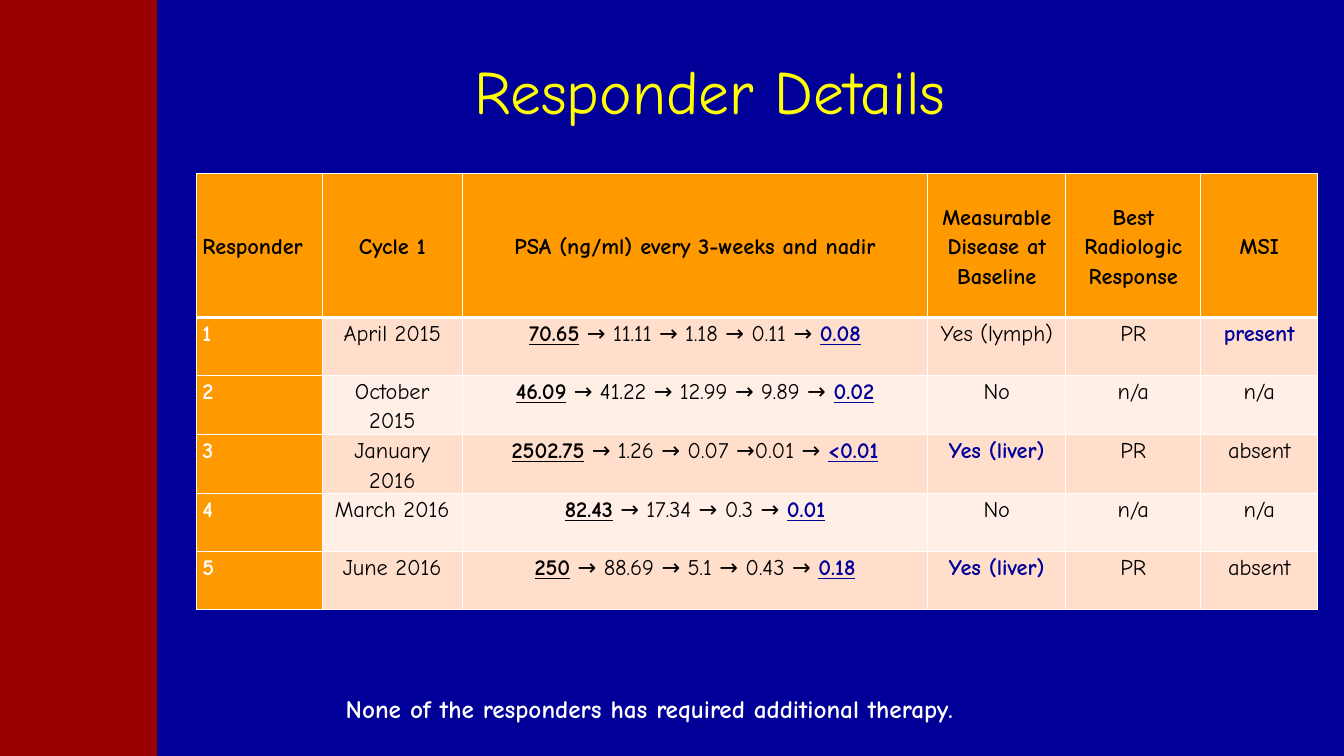
from lxml import etree
from pptx import Presentation
from pptx import util as u
from pptx.dml.color import RGBColor
from pptx.enum import shapes, text
from pptx.oxml import ns

BLUE = RGBColor(0x00, 0x00, 0x99)
RED = RGBColor(0x99, 0x00, 0x00)
YELLOW = RGBColor(0xFF, 0xFF, 0x00)
ORANGE = RGBColor(0xFF, 0x99, 0x00)
PEACH = RGBColor(0xFF, 0xDE, 0xCB)
CREAM = RGBColor(0xFF, 0xEF, 0xE7)
WHITE = RGBColor(0xFF, 0xFF, 0xFF)
BLACK = RGBColor(0x00, 0x00, 0x00)

LEFT, CENTER = text.PP_ALIGN.LEFT, text.PP_ALIGN.CENTER
TOP, MIDDLE = text.MSO_ANCHOR.TOP, text.MSO_ANCHOR.MIDDLE
ARROW = " → "
HEADERS = ["Responder", "Cycle 1", "PSA (ng/ml) every 3-weeks and nadir",
           "Measurable Disease at Baseline", "Best Radiologic Response", "MSI"]
RESPONDERS = [
    ["1", "April 2015", "70.65 → 11.11 → 1.18 → 0.11 → 0.08", "Yes (lymph)", "PR", "present"],
    ["2", "October 2015", "46.09 → 41.22 → 12.99 → 9.89 → 0.02", "No", "n/a", "n/a"],
    ["3", "January 2016", "2502.75 → 1.26 → 0.07 →0.01 → <0.01", "Yes (liver)", "PR", "absent"],
    ["4", "March 2016", "82.43 → 17.34 → 0.3 → 0.01", "No", "n/a", "n/a"],
    ["5", "June 2016", "250 → 88.69 → 5.1 → 0.43 → 0.18", "Yes (liver)", "PR", "absent"],
]
HIGHLIGHTS = {"Yes (liver)", "present"}
COLUMN_WIDTHS = [3.17, 3.53, 11.73, 3.48, 3.4, 2.95]
HEADER_HEIGHT, ROW_HEIGHT = 3.63, 1.46


class SlideBuilder:
    """Holds the text style and the current slide."""

    def __init__(self, slide, font_name):
        """Set the slide to draw on and its typeface."""
        self.slide = slide
        self.font_name = font_name

    def background(self, color):
        """Fill the slide background."""
        fill = self.slide.background.fill
        fill.solid()
        fill.fore_color.rgb = color

    def place(self, shape, *box):
        """Set left, top, width and height in centimetres."""
        for name, value in zip(("left", "top", "width", "height"), box):
            setattr(shape, name, u.Cm(value))

    def run(self, paragraph, words, size, color, **style):
        """Add one formatted run."""
        run = paragraph.add_run()
        run.text = words
        run.font.color.rgb = color
        for name, value in {"name": self.font_name, "size": u.Pt(size), **style}.items():
            setattr(run.font, name, value)

    def title(self, words, *box):
        """Move and format the title placeholder."""
        shape = self.slide.shapes.title
        self.place(shape, *box)
        frame = shape.text_frame
        frame.auto_size = text.MSO_AUTO_SIZE.NONE
        frame.vertical_anchor = MIDDLE
        frame.paragraphs[0].alignment = CENTER
        self.run(frame.paragraphs[0], words, 44, YELLOW)

    def band(self, color, *box):
        """Add a plain rectangle."""
        shape = self.slide.shapes.add_shape(shapes.MSO_SHAPE.RECTANGLE, *map(u.Cm, box))
        shape.shadow.inherit = False
        shape.fill.solid()
        shape.fill.fore_color.rgb = color
        shape.line.fill.background()

    def note(self, words, *box):
        """Add a bold line of text."""
        frame = self.slide.shapes.add_textbox(*map(u.Cm, box)).text_frame
        frame.word_wrap = True
        frame.auto_size = text.MSO_AUTO_SIZE.SHAPE_TO_FIT_TEXT
        self.run(frame.paragraphs[0], words, 18, WHITE, bold=True)

    def borders(self, cell, widths):
        """Draw white borders; widths are points for each side."""
        properties = cell._tc.get_or_add_tcPr()
        for side, width in widths.items():
            line = etree.SubElement(properties, ns.qn(f"a:ln{side}"), w=str(u.Pt(width)))
            fill = etree.SubElement(line, ns.qn("a:solidFill"))
            etree.SubElement(fill, ns.qn("a:srgbClr"), val=str(WHITE))

    def cell_text(self, paragraph, words, row, column):
        """Write a cell, stressing baseline, nadir and notable findings."""
        if row and ARROW in words:
            baseline, _, rest = words.partition(ARROW)
            middle, _, nadir = rest.rpartition(ARROW)
            self.run(paragraph, baseline, 16, BLACK, bold=True, underline=True)
            self.run(paragraph, ARROW + middle + ARROW, 16, BLACK, bold=False)
            self.run(paragraph, nadir, 16, BLUE, bold=True, underline=True)
            return
        highlighted = words in HIGHLIGHTS
        color = BLUE if highlighted else WHITE if row and not column else BLACK
        self.run(paragraph, words, 16, color, bold=highlighted or not row or not column)

    def table(self, rows, left, top):
        """Add the table with an orange header row and first column."""
        heights = [HEADER_HEIGHT] + [ROW_HEIGHT] * (len(rows) - 1)
        box = map(u.Cm, (left, top, sum(COLUMN_WIDTHS), sum(heights)))
        table = self.slide.shapes.add_table(len(rows), len(rows[0]), *box).table
        for column, width in zip(table.columns, COLUMN_WIDTHS):
            column.width = u.Cm(width)
        for index, height in enumerate(heights):
            table.rows[index].height = u.Cm(height)
            for column, words in enumerate(rows[index]):
                cell = table.cell(index, column)
                self.borders(cell, {"L": 1, "R": 1, "T": 3 if index == 1 else 1,
                                    "B": 1 if index else 3})
                cell.fill.solid()
                body = PEACH if index % 2 else CREAM
                cell.fill.fore_color.rgb = body if index and column else ORANGE
                style = {"margin_left": u.Cm(0.15), "margin_right": u.Cm(0.15),
                         "margin_top": 0, "margin_bottom": 0,
                         "vertical_anchor": TOP if index else MIDDLE}
                for name, value in style.items():
                    setattr(cell, name, value)
                paragraph = cell.text_frame.paragraphs[0]
                paragraph.alignment = CENTER if column else LEFT
                paragraph.line_spacing = 1.15
                self.cell_text(paragraph, words, index, column)


def main():
    """Build and save the slide."""
    presentation = Presentation()
    presentation.slide_width = u.Cm(33.87)
    presentation.slide_height = u.Cm(19.05)
    slide = presentation.slides.add_slide(presentation.slide_layouts[5])
    builder = SlideBuilder(slide, "Comic Neue")
    builder.background(BLUE)
    builder.band(RED, 0, 0, 3.96, 19.05)
    builder.title("Responder Details", 9.32, 1.07, 17.15, 2.39)
    builder.table([HEADERS] + RESPONDERS, 4.95, 4.37)
    builder.note("None of the responders has required additional therapy.", 8.46, 17.35, 20.47, 1.02)
    presentation.save("out.pptx")


if __name__ == "__main__":
    main()
